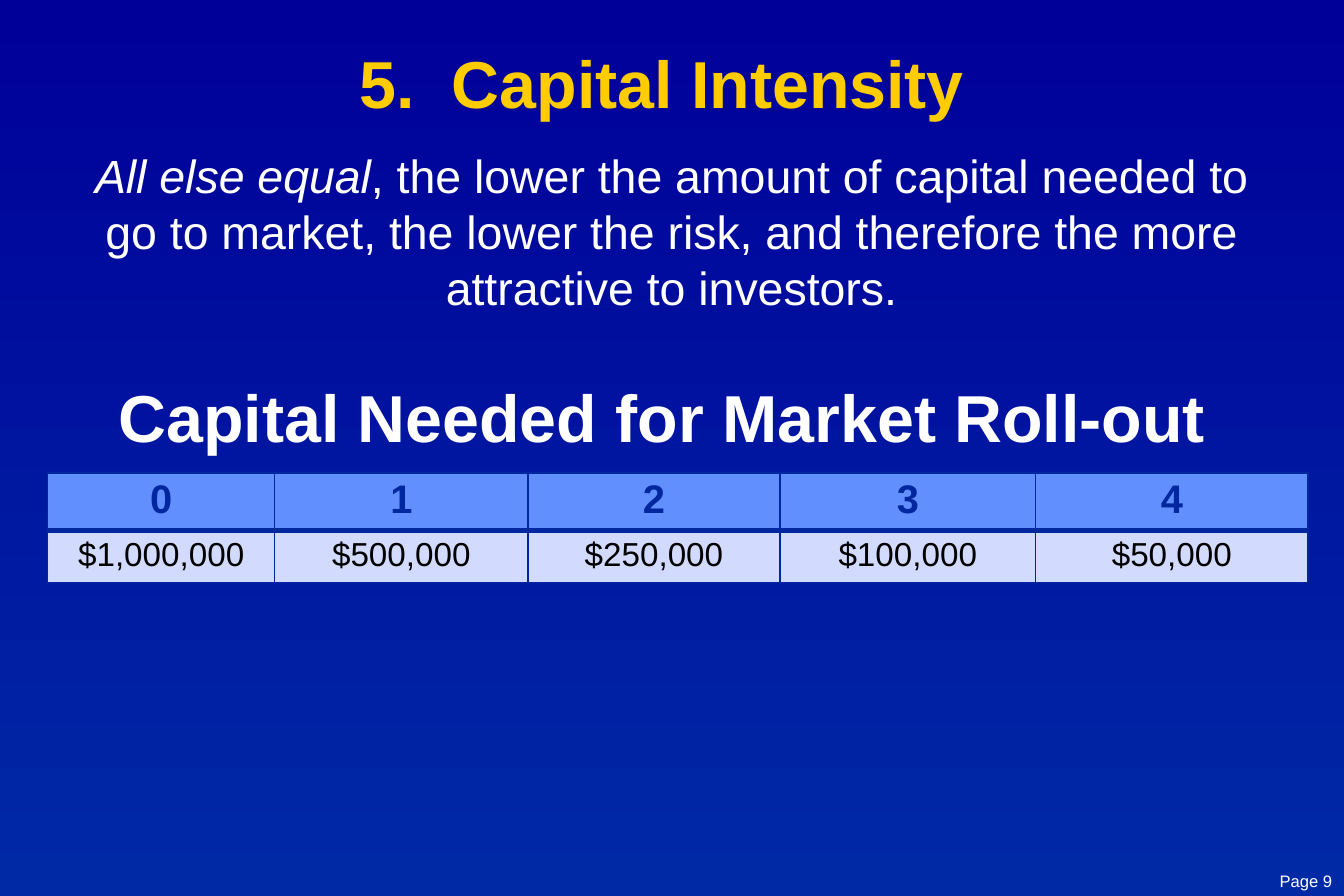
from dataclasses import dataclass

from lxml.etree import SubElement
from pptx import Presentation
from pptx.dml.color import RGBColor
from pptx.enum.text import PP_ALIGN
from pptx.oxml.ns import qn
from pptx.util import Inches, Pt

WHITE, GOLD, NAVY = "FFFFFF", "FFCC00", "00279F"


@dataclass
class Label:
    runs: list[str]
    left: float
    top: float
    width: float
    height: float
    size: int
    color: str = WHITE
    bold: bool = False
    align: PP_ALIGN = PP_ALIGN.CENTER
    pitch: float | None = None  # line pitch in points


@dataclass
class Row:
    cells: list[str]
    height: float
    size: int
    color: str
    fill: str
    bold: bool
    pad: float
    edges: dict[str, float]  # border widths in points


LABELS = [
    Label(["5.  Capital Intensity"], 0.48, 0.35, 10.12, 0.64, 40, GOLD, True),
    Label(["All else equal", ", the lower the amount of capital needed to go to market, "
           "the lower the risk, and therefore the more attractive to investors."],
          0.56, 1.23, 10.12, 1.41, 28, pitch=33.75),
    Label(["Capital Needed for Market Roll-out"], 0.48, 3.15, 10.12, 0.64, 40, bold=True),
    Label(["Page 9"], 9.97, 7.29, 1.18, 0.16, 10, align=PP_ALIGN.RIGHT),
]
COLS = [1.9, 2.12, 2.11, 2.14, 2.28]
ROWS = [
    Row(["0", "1", "2", "3", "4"], 0.46, 24, NAVY, "618FFD", True, 0.04,
        {"L": 1, "R": 1, "T": 1, "B": 3}),
    Row(["$1,000,000", "$500,000", "$250,000", "$100,000", "$50,000"],
        0.42, 20, "000000", "D2DBFE", False, 0.05, {"L": 1, "R": 1, "B": 1}),
]


def rgb(code: str) -> RGBColor:
    return RGBColor.from_string(code)


def style(para, size: int, color: str, bold: bool, align: PP_ALIGN) -> None:
    para.alignment = align
    font = para.font
    font.name, font.size, font.bold = "Arial", Pt(size), bold
    font.color.rgb = rgb(color)


def add_label(slide, label: Label):
    box = slide.shapes.add_textbox(Inches(label.left), Inches(label.top),
                                   Inches(label.width), Inches(label.height))
    frame = box.text_frame
    frame.word_wrap = True
    frame.margin_left = frame.margin_right = 0
    frame.margin_top = frame.margin_bottom = 0
    para = frame.paragraphs[0]
    for text in label.runs:
        para.add_run().text = text
    style(para, label.size, label.color, label.bold, label.align)
    if label.pitch:
        para.line_spacing = Pt(label.pitch)
    return para


def add_edge(cell, side: str, width: float) -> None:
    props = cell._tc.get_or_add_tcPr()
    line = SubElement(props, qn(f"a:ln{side}"), w=str(Pt(width)))
    fill = SubElement(line, qn("a:solidFill"))
    SubElement(fill, qn("a:srgbClr"), val=NAVY)


def fill_cell(cell, text: str, row: Row) -> None:
    for side, width in row.edges.items():
        add_edge(cell, side, width)
    cell.fill.solid()
    cell.fill.fore_color.rgb = rgb(row.fill)
    cell.margin_top = cell.margin_bottom = Inches(row.pad)
    cell.text = text
    style(cell.text_frame.paragraphs[0], row.size, row.color, row.bold, PP_ALIGN.CENTER)


def add_grid(slide) -> None:
    high = sum(row.height for row in ROWS)
    table = slide.shapes.add_table(len(ROWS), len(COLS), Inches(0.4), Inches(3.96),
                                   Inches(sum(COLS)), Inches(high)).table
    for col, width in zip(table.columns, COLS):
        col.width = Inches(width)
    for line, row in zip(table.rows, ROWS):
        line.height = Inches(row.height)
        for cell, text in zip(line.cells, row.cells):
            fill_cell(cell, text, row)


def main() -> None:
    deck = Presentation()
    deck.slide_width, deck.slide_height = Inches(11.25), Inches(7.5)
    slide = deck.slides.add_slide(deck.slide_layouts[6])

    # Background, dark at the top
    back = slide.background.fill
    back.gradient()
    back.gradient_angle = 270
    for stop, code in zip(back.gradient_stops, ["000099", "0029A6"]):
        stop.color.rgb = rgb(code)

    # Title, statement, heading and page number
    title, claim, *rest = [add_label(slide, label) for label in LABELS]
    claim.runs[0].font.italic = True

    # Capital table
    add_grid(slide)
    deck.save("out.pptx")


if __name__ == "__main__":
    main()
